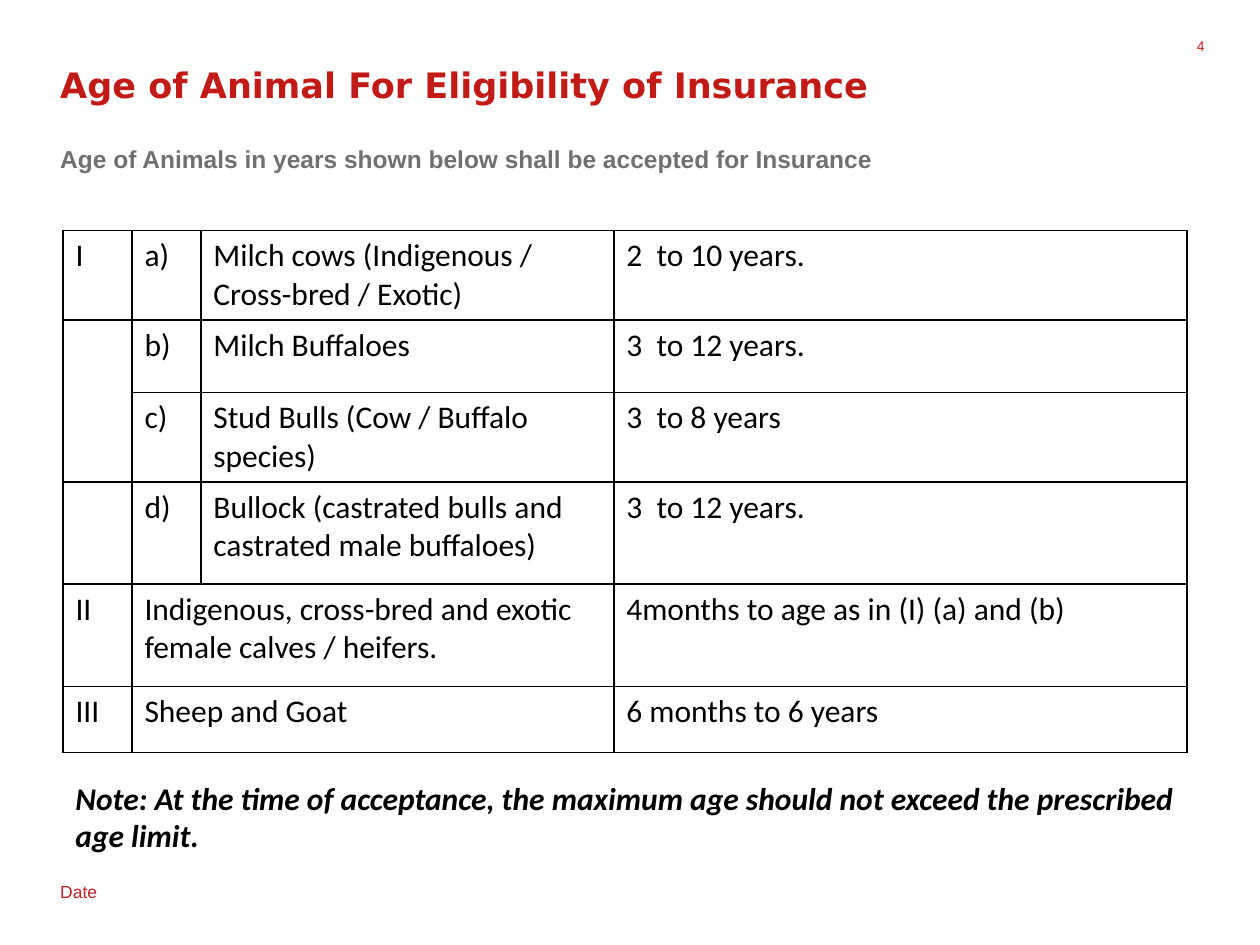
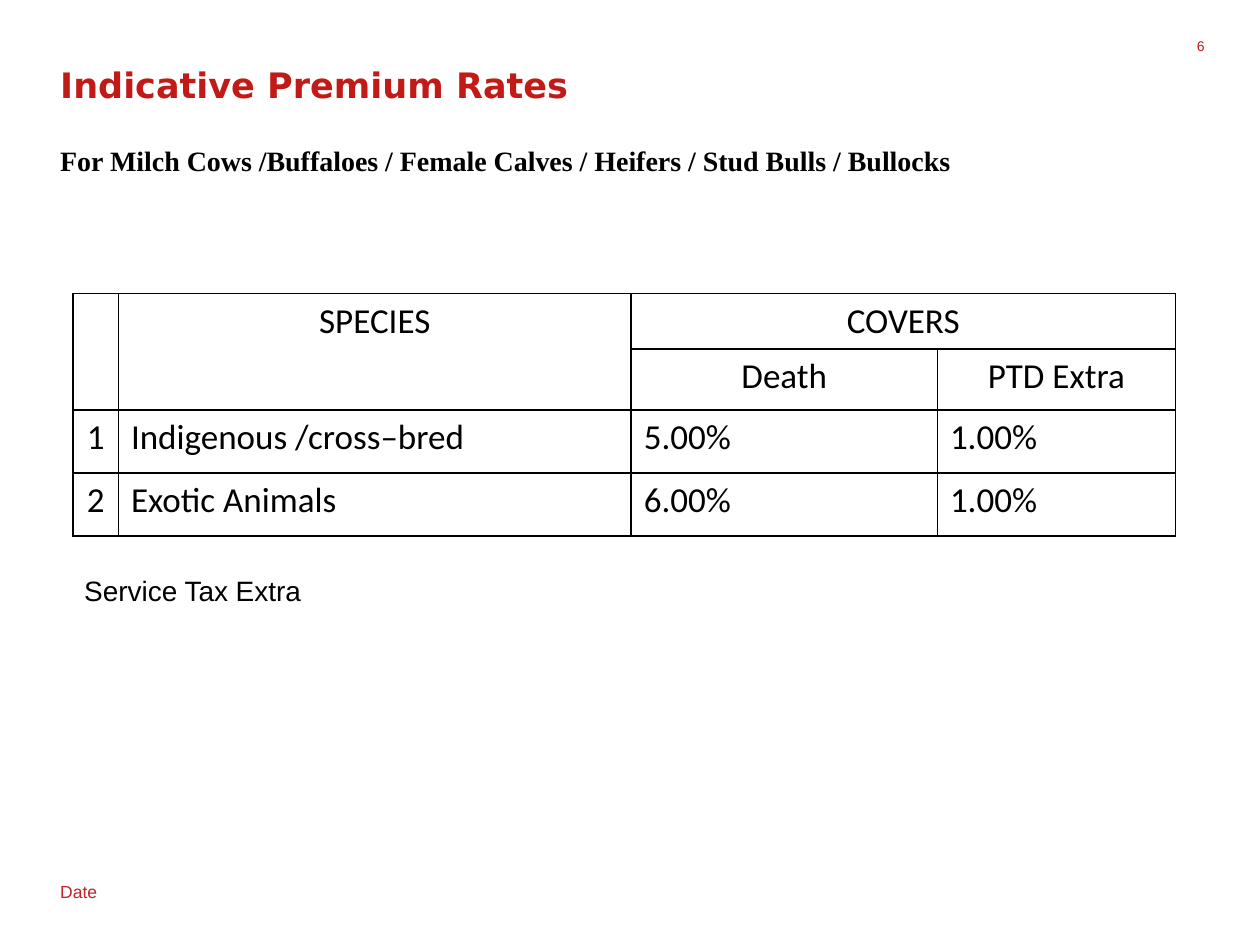
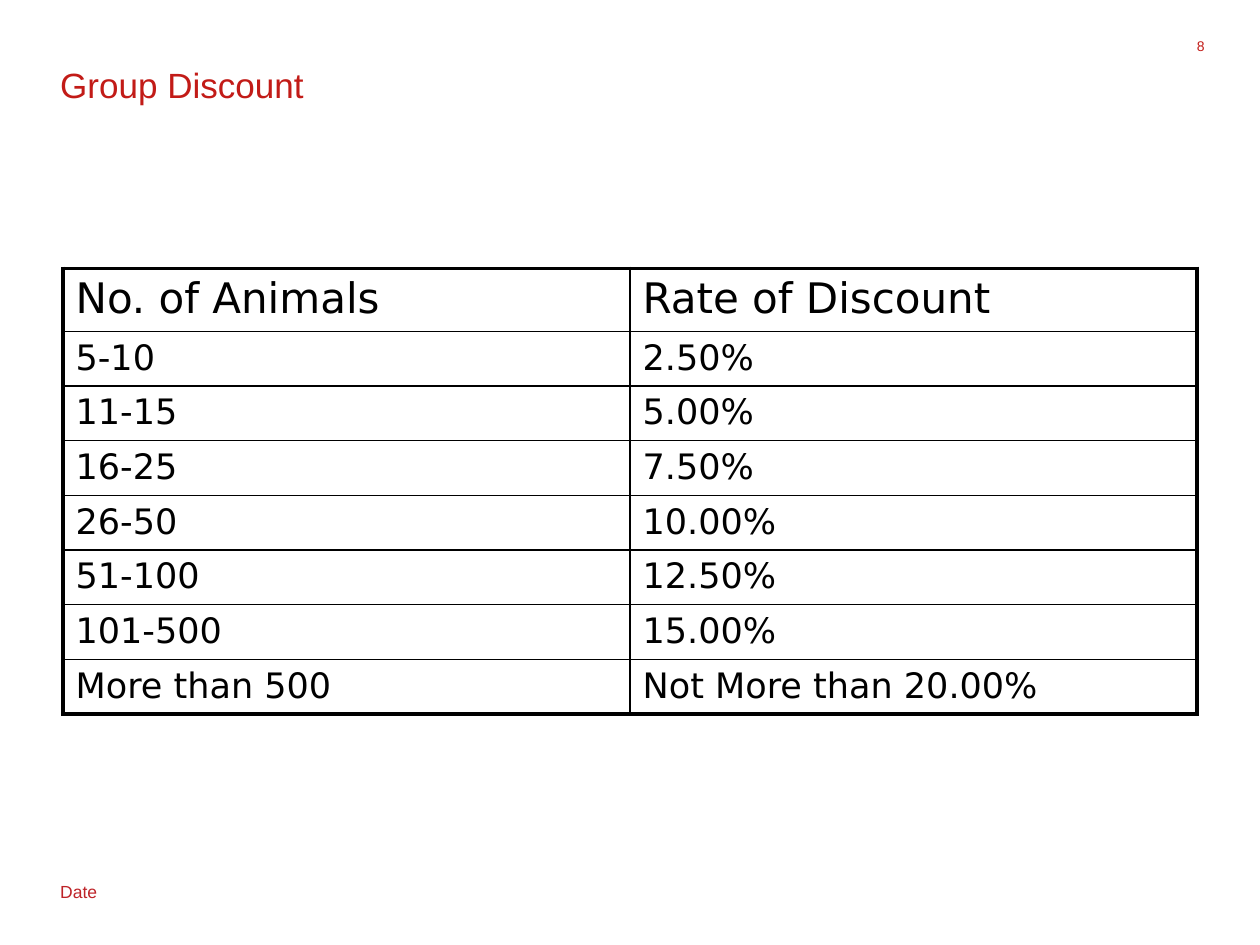
import pptx
import pptx.dml.color
import pptx.enum.text
import pptx.oxml
import pptx.oxml.ns
import pptx.util

Pt = pptx.util.Pt
ALIGN = pptx.enum.text.PP_ALIGN
RED, BLACK, GREY, WHITE = "C21B17", "000000", "6F7072", "FFFFFF"
FOOTER_RED = "BE2328"
SANS, HEADING, BODY, SERIF = "Arial", "DejaVu Sans", "Calibri", "Times New Roman"
MARGIN, CONTENT_WIDTH = 27.36, 660.24
THIN, THICK = 1, 2.25


def rgb(value):
    return pptx.dml.color.RGBColor.from_string(value)


class Deck:
    def __init__(self):
        self.prs = pptx.Presentation()
        self.prs.slide_width, self.prs.slide_height = Pt(720), Pt(540)
        self.s = None

    def slide(self, number, title, font=HEADING, bold=True):
        self.s = self.prs.slides.add_slide(self.prs.slide_layouts[6])
        p = self.text((MARGIN, 498.24, 36, 20.16), "Date", SANS, 10, FOOTER_RED, wrap=False)
        p.line_spacing, p.space_after = 1.15, Pt(10)
        p = self.text((672.48, 21.6, 15.84, 14.4), number, SANS, 8, RED, inset=False)
        p.alignment = ALIGN.RIGHT
        p = self.text((MARGIN, 34.56, CONTENT_WIDTH, 41.04), title, font, 20, RED, bold)
        p.line_spacing = Pt(22)

    def subtitle(self, text, font, size, color):
        self.text((MARGIN, 78.48, CONTENT_WIDTH, 26), text, font, size, color, True)

    def run(self, p, text, font, size, color, bold=False, italic=False):
        r = p.add_run()
        r.text = text
        r.font.name, r.font.size = font, Pt(size)
        r.font.bold, r.font.italic = bold, italic
        r.font.color.rgb = rgb(color)

    def text(self, box, text, font, size, color=BLACK, bold=False, italic=False,
             wrap=True, inset=True):
        tf = self.s.shapes.add_textbox(*map(Pt, box)).text_frame
        tf.word_wrap = wrap
        if not inset:
            tf.margin_left = tf.margin_top = tf.margin_right = tf.margin_bottom = 0
        p = tf.paragraphs[0]
        self.run(p, text, font, size, color, bold, italic)
        return p

    def border(self, cell, widths):
        tcPr = cell._tc.get_or_add_tcPr()
        for i, (side, width) in enumerate(zip("LRTB", widths)):
            tcPr.insert(i, pptx.oxml.parse_xml(
                f'<a:ln{side} {pptx.oxml.ns.nsdecls("a")} w="{Pt(width)}">'
                f'<a:solidFill><a:srgbClr val="{BLACK}"/></a:solidFill></a:ln{side}>'))

    def table(self, left, top, columns, heights, rows, font, size, header_size=None,
              merges=(), centered=lambda row, column: False, frame=THIN, fill=WHITE):
        last_row, last_column = len(rows) - 1, len(columns) - 1
        table = self.s.shapes.add_table(
            len(rows), len(columns), Pt(left), Pt(top),
            Pt(sum(columns)), Pt(sum(heights))).table
        table.first_row = table.horz_banding = False
        for column, width in zip(table.columns, columns):
            column.width = Pt(width)
        for row, height in zip(table.rows, heights):
            row.height = Pt(height)
        for i, row in enumerate(rows):
            for j, text in enumerate(row):
                cell = table.cell(i, j)
                if fill:
                    cell.fill.solid()
                    cell.fill.fore_color.rgb = rgb(fill)
                else:
                    cell.fill.background()
                outer = (j == 0, j == last_column, i == 0, i == last_row)
                self.border(cell, [frame if edge else THIN for edge in outer])
                if text:
                    p = cell.text_frame.paragraphs[0]
                    if centered(i, j):
                        p.alignment = ALIGN.CENTER
                    self.run(p, text, font, header_size if header_size and i == 0 else size, BLACK)
        for first, last in merges:
            table.cell(*first).merge(table.cell(*last))


def eligibility(deck):
    deck.slide("4", "Age of Animal For Eligibility of Insurance")
    deck.subtitle("Age of Animals in years shown below shall be accepted for Insurance", SANS, 14, GREY)
    rows = [
        ("I", "a)", "Milch cows (Indigenous / Cross-bred / Exotic)", "2  to 10 years."),
        ("", "b)", "Milch Buffaloes", "3  to 12 years."),
        ("", "c)", "Stud Bulls (Cow / Buffalo species)", "3  to 8 years"),
        ("", "d)", "Bullock (castrated bulls and castrated male buffaloes)", "3  to 12 years."),
        ("II", "Indigenous, cross-bred and exotic female calves / heifers.", "",
         "4months to age as in (I) (a) and (b)"),
        ("III", "Sheep and Goat", "", "6 months to 6 years"),
    ]
    deck.table(36, 131.76, (39.4, 39.4, 236, 327.6), (51.12, 41.4, 51.12, 58.4, 58.4, 37.8),
               rows, BODY, 18,
               merges=[((1, 0), (2, 0)), ((4, 1), (4, 2)), ((5, 1), (5, 2))])
    deck.text((36, 441.36, 642.24, 51.12),
              "Note: At the time of acceptance, the maximum age should not exceed the prescribed age limit.",
              BODY, 18, bold=True, italic=True)


def premium_rates(deck):
    deck.slide("6", "Indicative Premium Rates")
    deck.subtitle("For Milch Cows /Buffaloes / Female Calves / Heifers / Stud Bulls / Bullocks",
                  SERIF, 16, BLACK)
    deck.text((41.04, 324, 660.96, 69.12), "Service Tax Extra", SANS, 16)
    rows = [
        ("", "SPECIES", "COVERS", ""),
        ("", "", "Death", "PTD Extra"),
        ("1", "Indigenous /cross–bred", "5.00%", "1.00%"),
        ("2", "Exotic Animals", "6.00%", "1.00%"),
    ]
    deck.table(41.76, 167.76, (25.92, 293.04, 175, 136), (31.7, 34.8, 36, 36), rows, BODY, 20,
               merges=[((0, 0), (1, 0)), ((0, 1), (1, 1)), ((0, 2), (0, 3))],
               centered=lambda row, column: row < 2 or column == 0)


def group_discount(deck):
    deck.slide("8", "Group Discount", SANS, False)
    rows = [
        ("No. of Animals", "Rate of Discount"),
        ("5-10", "2.50%"),
        ("11-15", "5.00%"),
        ("16-25", "7.50%"),
        ("26-50", "10.00%"),
        ("51-100", "12.50%"),
        ("101-500", "15.00%"),
        ("More than 500", "Not More than 20.00%"),
    ]
    deck.table(36, 153.36, (324, 324), [36] + [30.5] * (len(rows) - 1), rows, HEADING, 20,
               header_size=24, frame=THICK, fill=None)


def main():
    deck = Deck()
    eligibility(deck)
    premium_rates(deck)
    group_discount(deck)
    deck.prs.save("out.pptx")


if __name__ == "__main__":
    main()
